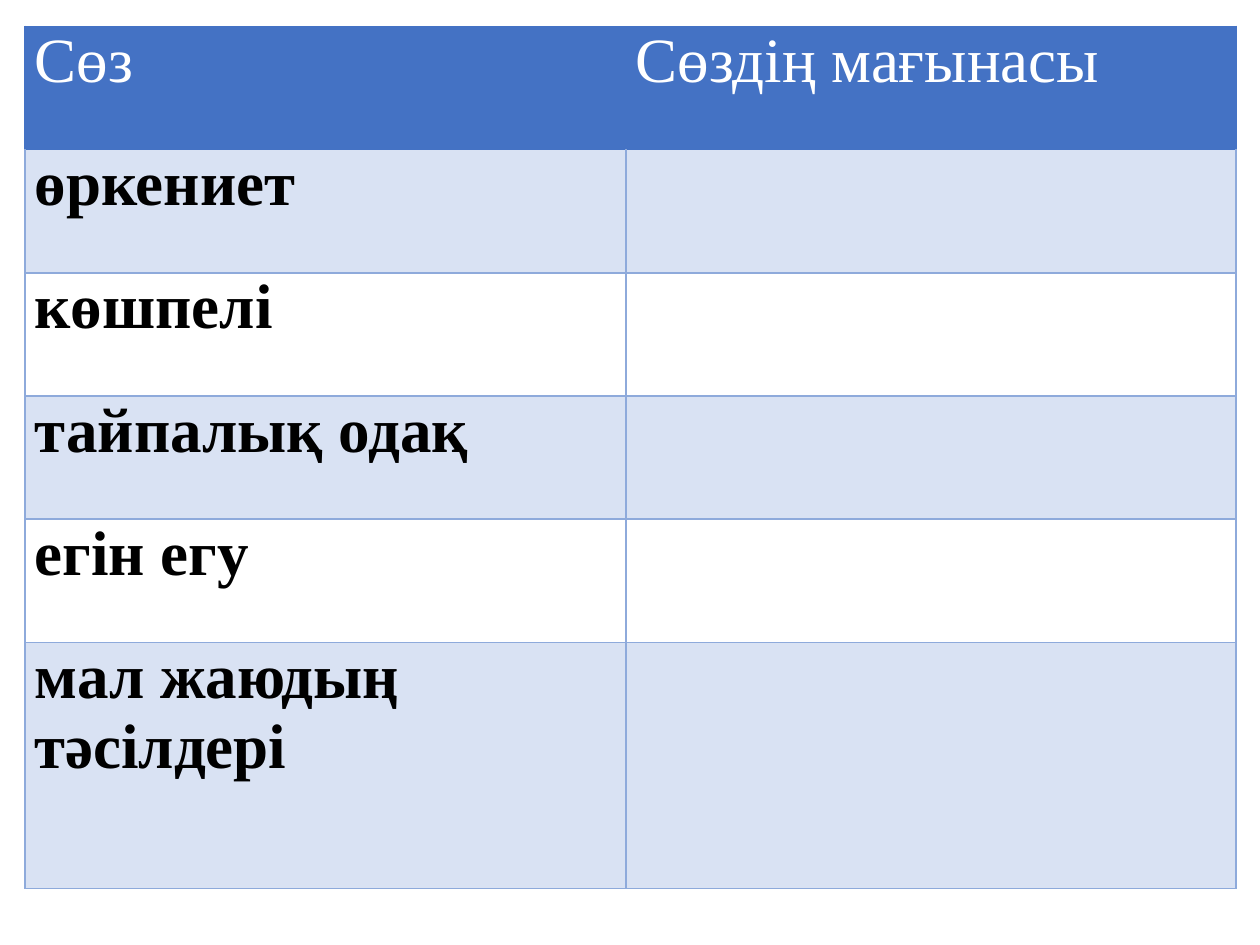
from lxml.etree import fromstring
from pptx import Presentation
from pptx.dml.color import RGBColor
from pptx.enum.text import PP_ALIGN
from pptx.oxml.ns import nsdecls, qn
from pptx.util import Pt

HEADER = ("Cөз", "Сөздің мағынасы")
WORDS = ["өркениет", "көшпелі", "тайпалық одақ", "егін егу", "мал жаюдың тәсілдері"]
ROWS = [HEADER] + [(word, "") for word in WORDS]

BLUE = RGBColor(0x44, 0x72, 0xC4)
PALE = RGBColor(0xD9, 0xE2, 0xF3)
LINE = RGBColor(0x8E, 0xAA, 0xDB)
WHITE = RGBColor(0xFF, 0xFF, 0xFF)
BLACK = RGBColor(0x00, 0x00, 0x00)

LEFT, TOP = 14.4, 15.1
COL_WIDTHS = [343.4, 348.5]
ROW_HEIGHT = 70.4
HEIGHTS = [ROW_HEIGHT] * (len(ROWS) - 1) + [2 * ROW_HEIGHT]
PLAIN_STYLE = "{2D5ABB26-0587-4C30-8999-92F81FD0307C}"

CELL_FORMAT = {"margin_left": Pt(5.4), "margin_right": Pt(5.4),
               "margin_top": 0, "margin_bottom": 0}
FONT_FORMAT = {"name": "Times New Roman", "size": Pt(36)}


def set_format(target, values):
    for name, value in values.items():
        setattr(target, name, value)


def set_borders(cell, colors):
    tcPr = cell._tc.get_or_add_tcPr()
    edges = [edge for edge in "LRTB" if edge in colors]
    for i, edge in enumerate(edges):
        tcPr.insert(i, fromstring(
            f'<a:ln{edge} {nsdecls("a")} w="{Pt(1)}"><a:solidFill>'
            f'<a:srgbClr val="{colors[edge]}"/></a:solidFill></a:ln{edge}>'))


def border_colors(row, col):
    if row == 0:
        return {"LR"[col]: BLUE, "T": BLUE, "B": BLUE}
    return {"L": LINE, "R": LINE, "T": BLUE if row == 1 else LINE, "B": LINE}


prs = Presentation()
prs.slide_width, prs.slide_height = Pt(720), Pt(540)
s = prs.slides.add_slide(prs.slide_layouts[6])
table = s.shapes.add_table(len(ROWS), len(HEADER), Pt(LEFT), Pt(TOP),
                           Pt(sum(COL_WIDTHS)), Pt(sum(HEIGHTS))).table
table._tbl.tblPr.find(qn("a:tableStyleId")).text = PLAIN_STYLE
for column, width in zip(table.columns, COL_WIDTHS):
    column.width = Pt(width)

for row, texts in enumerate(ROWS):
    table.rows[row].height = Pt(HEIGHTS[row])
    for col, text in enumerate(texts):
        cell = table.cell(row, col)
        set_format(cell, CELL_FORMAT)
        if row % 2 or row == 0:
            cell.fill.solid()
            cell.fill.fore_color.rgb = PALE if row else BLUE
        else:
            cell.fill.background()
        set_borders(cell, border_colors(row, col))
        if text:
            p = cell.text_frame.paragraphs[0]
            p.alignment = PP_ALIGN.LEFT if row == len(ROWS) - 1 else PP_ALIGN.JUSTIFY
            r = p.add_run()
            r.text = text
            set_format(r.font, {**FONT_FORMAT, "bold": row > 0})
            r.font.color.rgb = BLACK if row else WHITE

prs.save("out.pptx")
